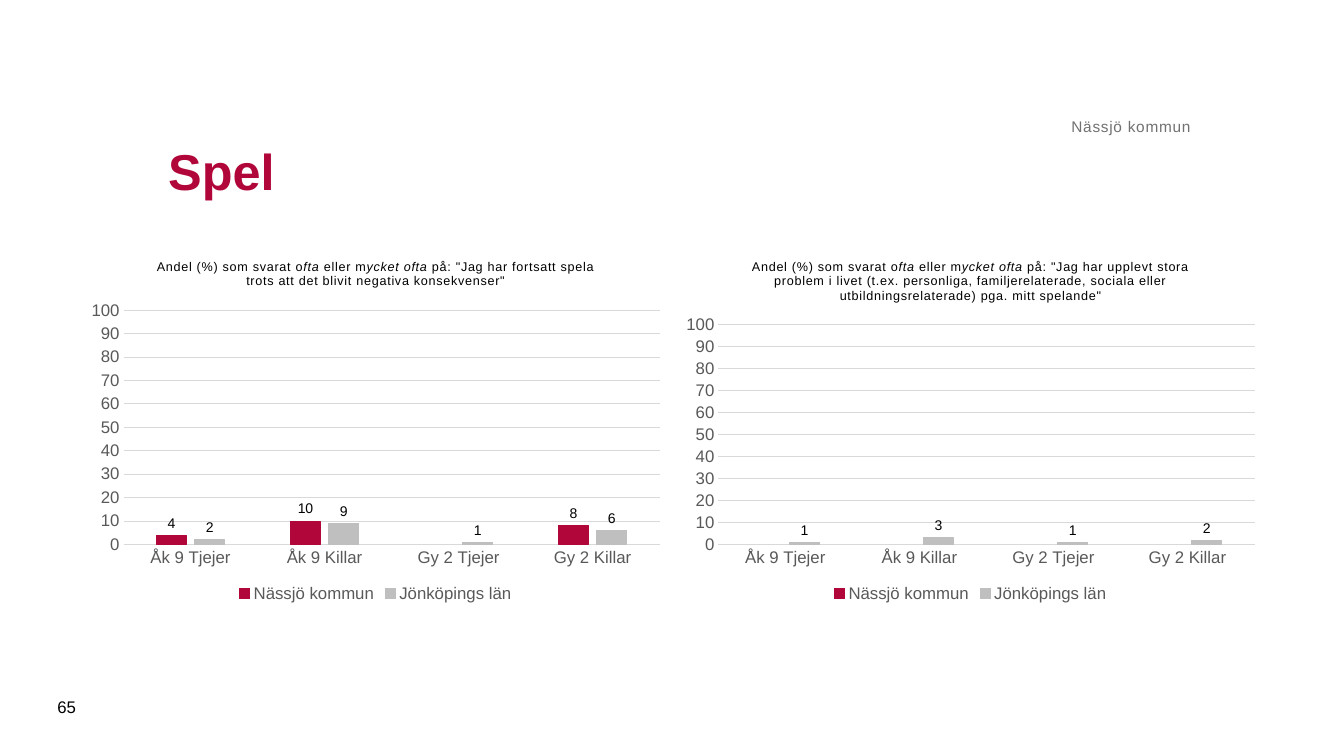
from pptx import Presentation
from pptx.chart.data import CategoryChartData
from pptx.dml.color import RGBColor
from pptx.enum.chart import XL_CHART_TYPE as Chart, XL_LABEL_POSITION as LabelPos
from pptx.enum.chart import XL_LEGEND_POSITION as LegendPos, XL_TICK_MARK as Tick
from pptx.enum.text import MSO_ANCHOR as Anchor, PP_ALIGN as Align
from pptx.util import Inches, Pt

COLORS = {"red": "B1063A", "silver": "BFBFBF", "grid": "D9D9D9",
          "axis": "595959", "gray": "717171", "black": "000000"}
GROUPS = ["Åk 9 Tjejer", "Åk 9 Killar", "Gy 2 Tjejer", "Gy 2 Killar"]
REGIONS = [("Nässjö kommun", "red"), ("Jönköpings län", "silver")]
INTRO = [("Andel (%) som svarat o", False), ("fta", True),
         (" eller m", False), ("ycket ofta", True)]
CHARTS = [
    ('"Jag har fortsatt spela trots att det blivit negativa konsekvenser"',
     [(4, 10, None, 8), (2, 9, 1, 6)]),
    ('"Jag har upplevt stora problem i livet (t.ex. personliga, familjerelaterade, '
     'sociala eller utbildningsrelaterade) pga. mitt spelande"',
     [(None,) * 4, (1, 3, 1, 2)]),
]
NUMBER_FORMAT = "#,##0;#,##0"


class SlideBuilder:
    font_name = "Arial"

    def __init__(self, prs):
        self.slide = prs.slides.add_slide(prs.slide_layouts[6])

    def color(self, name):
        return RGBColor.from_string(COLORS[name])

    def style(self, font, size, color, bold=False, italic=False):
        font.name = self.font_name
        font.size = Pt(size)
        font.bold = bold
        font.italic = italic
        font.color.rgb = self.color(color)

    def run(self, p, text, size, color, bold=False, italic=False, spacing=0):
        r = p.add_run()
        r.text = text
        self.style(r.font, size, color, bold, italic)
        if spacing:
            r.font._element.set("spc", str(round(spacing * 100)))

    def line(self, line, color):
        line.color.rgb = self.color(color)
        line.width = Pt(0.75)

    def text(self, box, text, size, color, bold=False, spacing=0,
             align=Align.LEFT, anchor=Anchor.MIDDLE, inset=True):
        sp = self.slide.shapes.add_textbox(*map(Inches, box))
        tf = sp.text_frame
        tf.word_wrap = True
        tf.vertical_anchor = anchor
        if not inset:
            tf.margin_left = tf.margin_right = tf.margin_top = tf.margin_bottom = 0
        p = tf.paragraphs[0]
        p.alignment = align
        self.run(p, text, size, color, bold, spacing=spacing)

    def chart(self, box, statement, values):
        data = CategoryChartData()
        data.categories = GROUPS
        for (region, _), vals in zip(REGIONS, values):
            data.add_series(region, vals)
        chart = self.slide.shapes.add_chart(
            Chart.COLUMN_CLUSTERED, *map(Inches, box), data).chart
        self.style(chart.font, 10, "black")

        chart.has_title = True
        chart.chart_title.include_in_layout = False
        p = chart.chart_title.text_frame.paragraphs[0]
        for text, italic in INTRO + [(f" på: {statement}", False)]:
            self.run(p, text, 9, "black", italic=italic, spacing=0.5)

        chart.has_legend = True
        chart.legend.position = LegendPos.BOTTOM
        chart.legend.include_in_layout = False
        self.style(chart.legend.font, 12, "axis")

        for axis in (chart.category_axis, chart.value_axis):
            axis.major_tick_mark = axis.minor_tick_mark = Tick.NONE
            self.style(axis.tick_labels.font, 12, "axis")
        self.line(chart.category_axis.format.line, "grid")
        axis = chart.value_axis
        axis.minimum_scale, axis.maximum_scale, axis.major_unit = 0, 100, 10
        axis.tick_labels.number_format = NUMBER_FORMAT
        axis.tick_labels.number_format_is_linked = False
        axis.format.line.fill.background()
        self.line(axis.major_gridlines.format.line, "grid")

        plot = chart.plots[0]
        plot.gap_width, plot.overlap, plot.vary_by_categories = 219, -27, False
        for series, (_, color) in zip(plot.series, REGIONS):
            series.format.fill.solid()
            series.format.fill.fore_color.rgb = self.color(color)
            self.line(series.format.line, color)
            labels = series.data_labels
            labels.show_value = True
            labels.position = LabelPos.OUTSIDE_END
            labels.number_format = NUMBER_FORMAT
            labels.number_format_is_linked = False
            self.style(labels.font, 10, "black")


def main():
    prs = Presentation()
    prs.slide_width, prs.slide_height = Inches(13.33), Inches(7.5)
    s = SlideBuilder(prs)
    for i, (statement, values) in enumerate(CHARTS):
        s.chart((0.79 + 5.9 * i, 2.4, 5.87, 3.62), statement, values)
    s.text((1.57, 0.98, 10.24, 1.42), "Spel", 36, "red", bold=True)
    s.text((1.57, 0.62, 10.24, 0.73), "Nässjö kommun", 11, "gray", spacing=0.5,
           align=Align.RIGHT, anchor=Anchor.BOTTOM, inset=False)
    s.text((0.47, 6.81, 0.57, 0.4), "65", 12, "black")
    prs.save("out.pptx")


if __name__ == "__main__":
    main()
